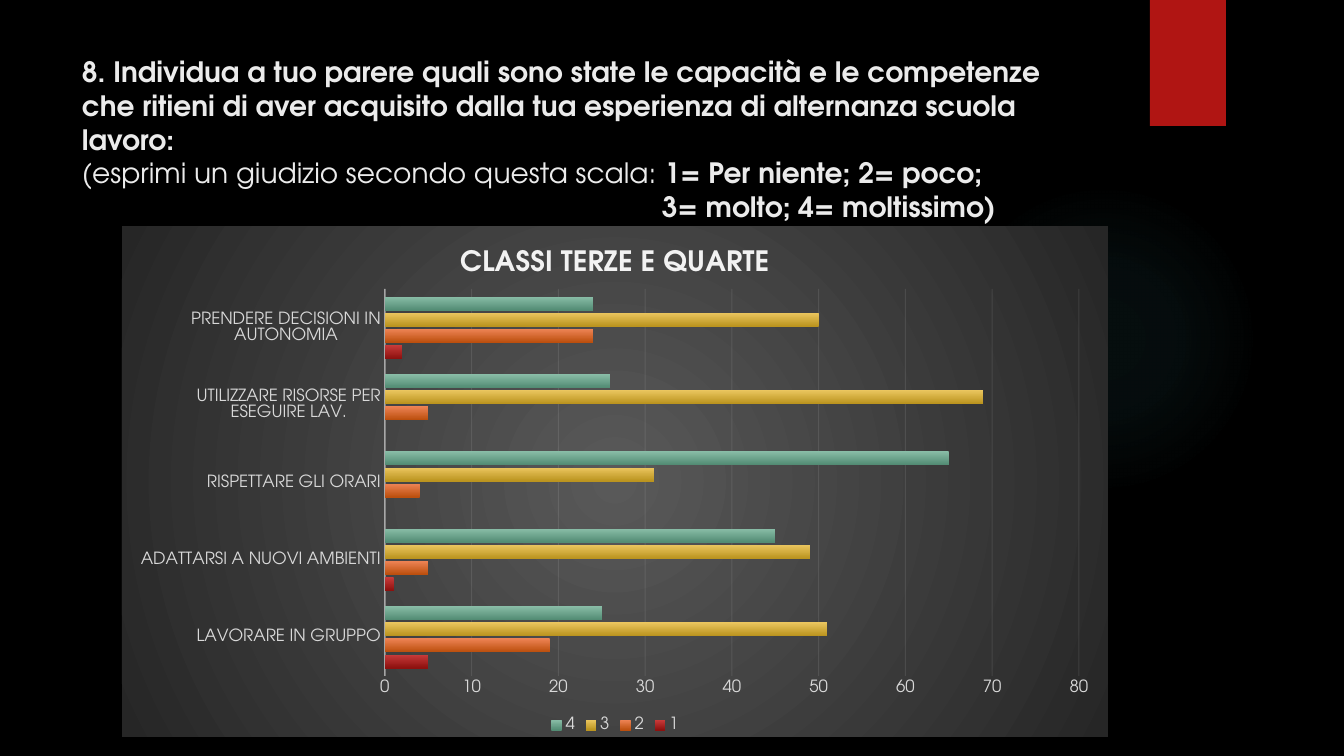
import pptx
import pptx.util
import pptx.chart.data
import pptx.dml.color
import pptx.enum.chart
import pptx.enum.shapes
import pptx.enum.text
import pptx.oxml
import pptx.oxml.ns

PX = 914400 / 100.8
FONT = "TeX Gyre Adventor"
COLORS = {"back": "000000", "red": "B01513", "glow": "50B9C1", "text": "EBEBEB",
          "label": "D9D9D9", "line": "F2F2F2", "panel_in": "595959", "panel_out": "262626"}
RGB = {name: pptx.dml.color.RGBColor.from_string(c) for name, c in COLORS.items()}
NS = pptx.oxml.ns.nsdecls("a", "c")


def gradient(stops, radial):
    """Gradient fill from (position %, colour, opacity %) stops."""
    gs = "".join(f'<a:gs pos="{pos * 1000}"><a:srgbClr val="{color}">'
                 f'<a:alpha val="{opacity * 1000}"/></a:srgbClr></a:gs>'
                 for pos, color, opacity in stops)
    shade = ('<a:path path="circle"><a:fillToRect l="50000" t="50000" r="50000" b="50000"/></a:path>'
             if radial else '<a:lin ang="5400000" scaled="0"/>')
    return pptx.oxml.parse_xml(f'<a:gradFill {NS} rotWithShape="1"><a:gsLst>{gs}</a:gsLst>{shade}</a:gradFill>')


def style_line(line, width, opacity):
    line.width = pptx.util.Pt(width)
    line.color.rgb = RGB["line"]
    color = line._get_or_add_ln().find(".//" + pptx.oxml.ns.qn("a:srgbClr"))
    color.append(pptx.oxml.parse_xml(f'<a:alpha {NS} val="{opacity * 1000}"/>'))


prs = pptx.Presentation()
prs.slide_width, prs.slide_height = round(1344 * PX), round(756 * PX)
s = prs.slides.add_slide(prs.slide_layouts[6])
s.background.fill.solid()
s.background.fill.fore_color.rgb = RGB["back"]

# Glow and red tab
shapes = pptx.enum.shapes.MSO_SHAPE
glow, tab = [s.shapes.add_shape(kind, *(round(v * PX) for v in box)) for kind, box in (
    (shapes.OVAL, (949, 184, 310, 310)), (shapes.RECTANGLE, (1150, 0, 76, 126)))]
for sp in (glow, tab):
    sp.shadow.inherit = False
    sp.line.fill.background()
glow._element.spPr.insert(2, gradient(
    [(0, COLORS["glow"], 7), (36, COLORS["glow"], 6), (69, COLORS["glow"], 0)], True))
tab.fill.solid()
tab.fill.fore_color.rgb = RGB["red"]

# Question
tf = s.shapes.add_textbox(*(round(v * PX) for v in (72, 50, 1037, 176))).text_frame
tf.word_wrap = True
tf.vertical_anchor = pptx.enum.text.MSO_ANCHOR.TOP
question = [
    [("8. Individua a tuo parere quali sono state le capacità e le competenze che ritieni "
      "di aver acquisito dalla tua esperienza di alternanza scuola lavoro:", True)],
    [("(esprimi un giudizio secondo questa scala: ", False), ("1= Per niente; 2= poco;", True)],
    [("3= molto; 4= moltissimo)", True)]]
for i, runs in enumerate(question):
    p = tf.paragraphs[0] if i == 0 else tf.add_paragraph()
    for text, bold in runs:
        r = p.add_run()
        r.text = text
        for key, value in {"name": FONT, "size": pptx.util.Pt(20), "bold": bold}.items():
            setattr(r.font, key, value)
        r.font.color.rgb = RGB["text"]
p._p.get_or_add_pPr().set("marL", str(round(580 * PX)))

# Chart data
data = pptx.chart.data.CategoryChartData()
data.categories = ["LAVORARE IN GRUPPO", "ADATTARSI A NUOVI AMBIENTI", "RISPETTARE GLI ORARI",
                   "UTILIZZARE RISORSE PER ESEGUIRE LAV.", "PRENDERE DECISIONI IN AUTONOMIA"]
ratings = {"1": ((5, 1, 0, 0, 2), "C93B3A", "8D110F"),
           "2": ((19, 5, 4, 5, 24), "EE8455", "BC4F0E"),
           "3": ((51, 49, 31, 69, 50), "EBC65F", "BB941F"),
           "4": ((25, 45, 65, 26, 24), "89BDA7", "538C74")}
for name, (values, top, bottom) in ratings.items():
    data.add_series(name, values)
chart = s.shapes.add_chart(pptx.enum.chart.XL_CHART_TYPE.BAR_CLUSTERED,
                           *(round(v * PX) for v in (122, 226, 986, 511)), data).chart

# Bars
plot = chart.plots[0]
for key, value in {"gap_width": 115, "overlap": -20, "vary_by_categories": False}.items():
    setattr(plot, key, value)
for ser, (values, top, bottom) in zip(plot.series, ratings.values()):
    ser.invert_if_negative = False
    ser._element.get_or_add_spPr().insert(0, gradient([(0, top, 100), (100, bottom, 100)], False))

# Axes and legend
cat, val = chart.category_axis, chart.value_axis
chart.has_legend = True
chart.legend.position = pptx.enum.chart.XL_LEGEND_POSITION.BOTTOM
chart.legend.include_in_layout = False
for font in (chart.font, cat.tick_labels.font, val.tick_labels.font, chart.legend.font):
    font.name, font.size = FONT, pptx.util.Pt(12)
    font.color.rgb = RGB["label"]
for axis in (cat, val):
    axis.major_tick_mark = axis.minor_tick_mark = pptx.enum.chart.XL_TICK_MARK.NONE
for key, value in {"minimum_scale": 0, "maximum_scale": 80, "major_unit": 10}.items():
    setattr(val, key, value)
val.has_major_gridlines = True
val.format.line.fill.background()
style_line(cat.format.line, 1, 54)
style_line(val.major_gridlines.format.line, 0.75, 10)

# Chart title
chart.has_title = True
r = chart.chart_title.text_frame.paragraphs[0].add_run()
r.text = "CLASSI TERZE E QUARTE"
for key, value in {"name": FONT, "size": pptx.util.Pt(20), "bold": True}.items():
    setattr(r.font, key, value)
r.font.color.rgb = RGB["line"]
chart.chart_title.include_in_layout = False

# Plot area and panel
area = chart._chartSpace.chart.plotArea
for old in area.findall(pptx.oxml.ns.qn("c:layout")):
    area.remove(old)
place = {"x": 263 / 986, "y": 63 / 511, "w": 694 / 986, "h": 387 / 511}
modes = "".join(f'<c:{k}Mode val="edge"/>' for k in "xy")
sizes = "".join(f'<c:{k} val="{v:.4f}"/>' for k, v in place.items())
area.insert(0, pptx.oxml.parse_xml(
    f'<c:layout {NS}><c:manualLayout><c:layoutTarget val="inner"/>{modes}{sizes}</c:manualLayout></c:layout>'))
panel = pptx.oxml.parse_xml(f'<c:spPr {NS}><a:ln><a:noFill/></a:ln></c:spPr>')
panel.insert(0, gradient([(0, COLORS["panel_in"], 100), (100, COLORS["panel_out"], 100)], True))
chart._chartSpace.find(pptx.oxml.ns.qn("c:txPr")).addprevious(panel)

prs.save("out.pptx")
